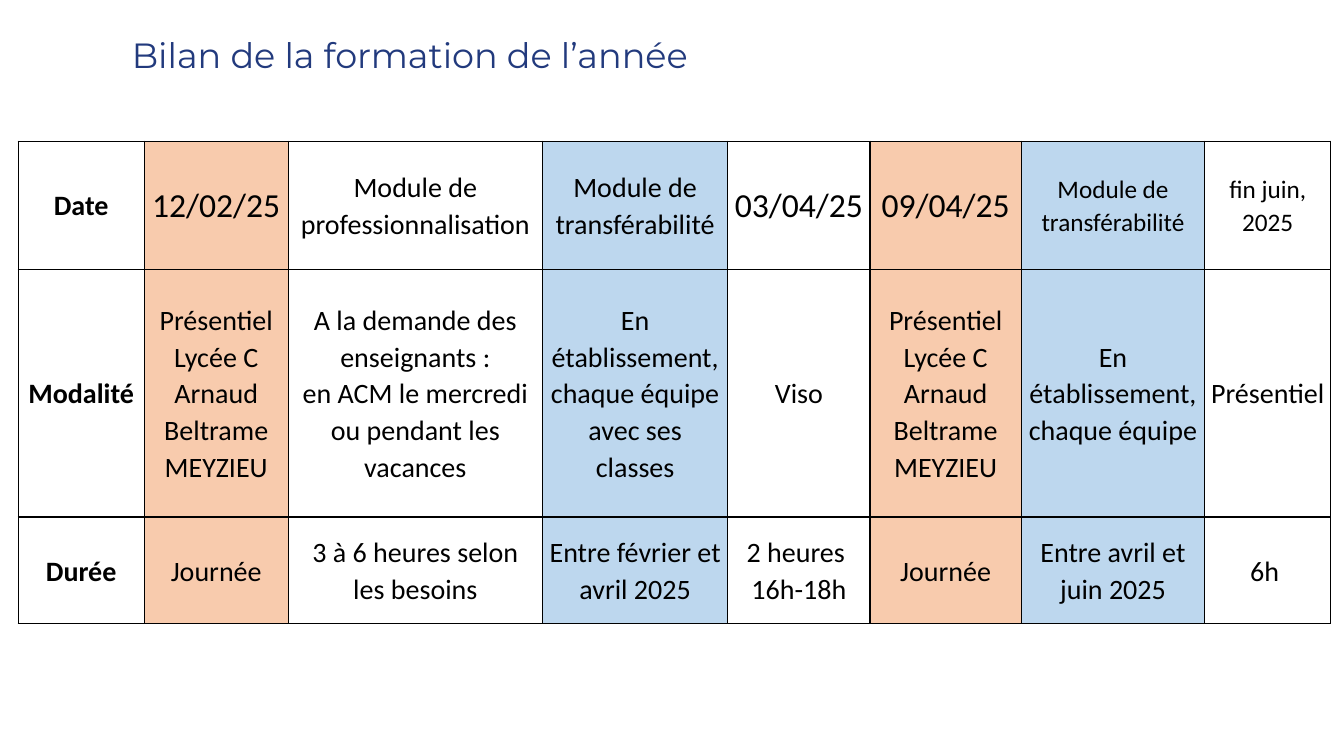
from lxml import etree
from pptx import Presentation
from pptx.dml.color import RGBColor
from pptx.enum.text import MSO_ANCHOR, PP_ALIGN
from pptx.oxml.ns import qn
from pptx.util import Inches, Pt

# Content
TITLE = "Bilan de la formation de l’année"
VENUE = ["Présentiel", "Lycée C Arnaud Beltrame", "MEYZIEU"]
ROWS = [  # each cell is a list of paragraphs
    [["Date"], ["12/02/25"], ["Module de professionnalisation"],
     ["Module de transférabilité"], ["03/04/25"], ["09/04/25"],
     ["Module de transférabilité"], ["fin juin, 2025"]],
    [["Modalité"], VENUE,
     ["A la demande des enseignants :", "en ACM le mercredi ou pendant les vacances"],
     ["En établissement, chaque équipe avec ses classes"], ["Viso"], VENUE,
     ["En établissement, chaque équipe"], ["Présentiel "]],
    [["Durée"], ["Journée"], ["3 à 6 heures selon les besoins"],
     ["Entre février et avril 2025"], ["2 heures  16h-18h"], ["Journée"],
     ["Entre avril et juin 2025"], ["6h "]],
]
COLORS = {"title": "223A7D", "text": "000000", "border": "000000",
          "onsite": "F8CBAD", "school": "BDD7EE"}
COL_FILLS = [None, "onsite", None, "school", None, "onsite", "school", None]
COL_WIDTHS = [1.25, 1.43, 2.52, 1.84, 1.41, 1.5, 1.82, 1.25]
ROW_HEIGHTS = [1.27, 2.46, 1.06]
DATE_SIZES = [20, 24, 20, 20, 24, 24, 18, 18]
BODY_SIZE = 20


def add_run(p, text, font, size, color, bold=False):
    r = p.add_run()
    r.text = text
    r.font.name, r.font.size, r.font.bold = font, Pt(size), bold
    r.font.color.rgb = RGBColor.from_string(COLORS[color])


def set_borders(cell):
    tc_pr = cell._tc.get_or_add_tcPr()
    for i, side in enumerate(("a:lnL", "a:lnR", "a:lnT", "a:lnB")):
        ln = etree.Element(qn(side), w=str(Pt(1)))
        fill = etree.SubElement(ln, qn("a:solidFill"))
        etree.SubElement(fill, qn("a:srgbClr"), val=COLORS["border"])
        tc_pr.insert(i, ln)


def fill_cell(cell, paragraphs, size, fill, bold):
    cell.vertical_anchor = MSO_ANCHOR.MIDDLE
    cell.margin_left = cell.margin_right = Inches(0.06)
    cell.margin_top = cell.margin_bottom = 0
    if fill:
        cell.fill.solid()
        cell.fill.fore_color.rgb = RGBColor.from_string(COLORS[fill])
    else:
        cell.fill.background()
    set_borders(cell)
    tf = cell.text_frame
    for i, text in enumerate(paragraphs):
        p = tf.add_paragraph() if i else tf.paragraphs[0]
        p.alignment, p.line_spacing = PP_ALIGN.CENTER, 1.07
        add_run(p, text, "Calibri", size, "text", bold)


prs = Presentation()
prs.slide_width, prs.slide_height = Inches(13.33), Inches(7.5)
s = prs.slides.add_slide(prs.slide_layouts[6])

# Title
box = s.shapes.add_textbox(Inches(1.21), Inches(0.28), Inches(11.82), Inches(0.52))
box.text_frame.word_wrap = True
add_run(box.text_frame.paragraphs[0], TITLE, "Montserrat", 25, "title")

# Training table
table = s.shapes.add_table(
    len(ROWS), len(COL_WIDTHS), Inches(0.18), Inches(1.4),
    Inches(sum(COL_WIDTHS)), Inches(sum(ROW_HEIGHTS))).table
table.first_row = table.horz_banding = False
for col, width in zip(table.columns, COL_WIDTHS):
    col.width = Inches(width)
for row, height in zip(table.rows, ROW_HEIGHTS):
    row.height = Inches(height)
for i, row in enumerate(ROWS):
    for j, paragraphs in enumerate(row):
        size = DATE_SIZES[j] if i == 0 else BODY_SIZE
        fill_cell(table.cell(i, j), paragraphs, size, COL_FILLS[j], bold=j == 0)

prs.save("out.pptx")
